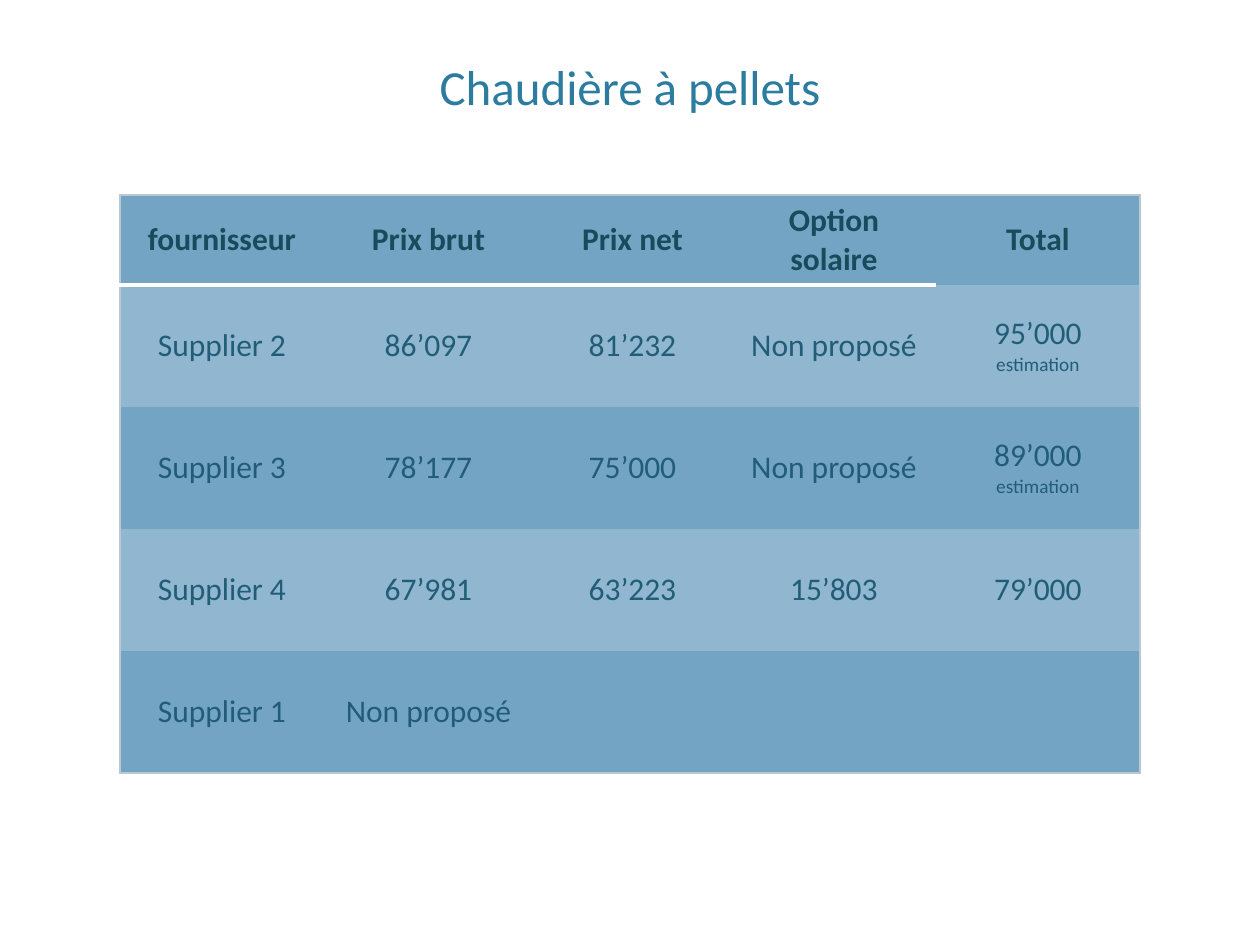
from lxml.etree import SubElement
from pptx import Presentation
from pptx.dml.color import RGBColor
from pptx.enum.text import MSO_ANCHOR, PP_ALIGN
from pptx.oxml.ns import qn
from pptx.util import Pt

PX = 914400 / 126
NO_STYLE = "{2D5ABB26-0587-4C30-8999-92F81FD0307C}"
DARK, LIGHT, FRAME = "74A4C4", "90B6D0", "B9C8D2"


def px(n):
    """Turn px into EMU."""
    return round(n * PX)


def write(p, text, size, color, bold=False):
    p.alignment = PP_ALIGN.CENTER
    r = p.add_run()
    r.text = text
    for name, value in {"name": "Calibri", "size": Pt(size), "bold": bold}.items():
        setattr(r.font, name, value)
    r.font.color.rgb = RGBColor.from_string(color)


prs = Presentation()
prs.slide_width, prs.slide_height = px(1260), px(945)
s = prs.slides.add_slide(prs.slide_layouts[5])

title = s.shapes.title
title.left, title.top, title.width, title.height = px(76), px(10), px(1108), px(112)
tf = title.text_frame
tf.vertical_anchor = MSO_ANCHOR.BOTTOM
write(tf.paragraphs[0], "Chaudière à pellets", 28, "2C7C9F")

rows = [
    ["fournisseur", "Prix brut", "Prix net", "Option solaire", "Total"],
    ["Supplier 2", "86’097", "81’232", "Non proposé", "95’000\nestimation"],
    ["Supplier 3", "78’177", "75’000", "Non proposé", "89’000\nestimation"],
    ["Supplier 4", "67’981", "63’223", "15’803", "79’000"],
    ["Supplier 1", "Non proposé", "", "", ""],
]
widths = [204, 209, 199, 204, 204]
heights = [90] + [122] * 4
last_row, last_col = len(rows) - 1, len(widths) - 1

table = s.shapes.add_table(len(rows), len(widths), px(120), px(195),
                           px(sum(widths)), px(sum(heights))).table
table._tbl.tblPr.find(qn("a:tableStyleId")).text = NO_STYLE
for col, width in zip(table.columns, widths):
    col.width = px(width)
for row, height in zip(table.rows, heights):
    row.height = px(height)

for i, texts in enumerate(rows):
    for j, text in enumerate(texts):
        cell = table.cell(i, j)
        cell.vertical_anchor = MSO_ANCHOR.MIDDLE

        # The frame runs round the table; a white rule underlines the first headings.
        borders = {}
        if j == 0:
            borders["lnL"] = FRAME, 1
        if j == last_col:
            borders["lnR"] = FRAME, 1
        if i == 0:
            borders["lnT"] = FRAME, 1
            if j < last_col:
                borders["lnB"] = "FFFFFF", 2.5
        if i == last_row:
            borders["lnB"] = FRAME, 1
        for side, (color, points) in borders.items():
            ln = SubElement(cell._tc.get_or_add_tcPr(), qn(f"a:{side}"), w=str(Pt(points)))
            SubElement(SubElement(ln, qn("a:solidFill")), qn("a:srgbClr"), val=color)

        cell.fill.solid()
        cell.fill.fore_color.rgb = RGBColor.from_string(LIGHT if i % 2 else DARK)

        tf = cell.text_frame
        for k, line in enumerate(text.split("\n") if text else []):
            p = tf.add_paragraph() if k else tf.paragraphs[0]
            write(p, line, 11 if k else 18, "215D77" if i else "184B5B", bold=i == 0)

prs.save("out.pptx")
